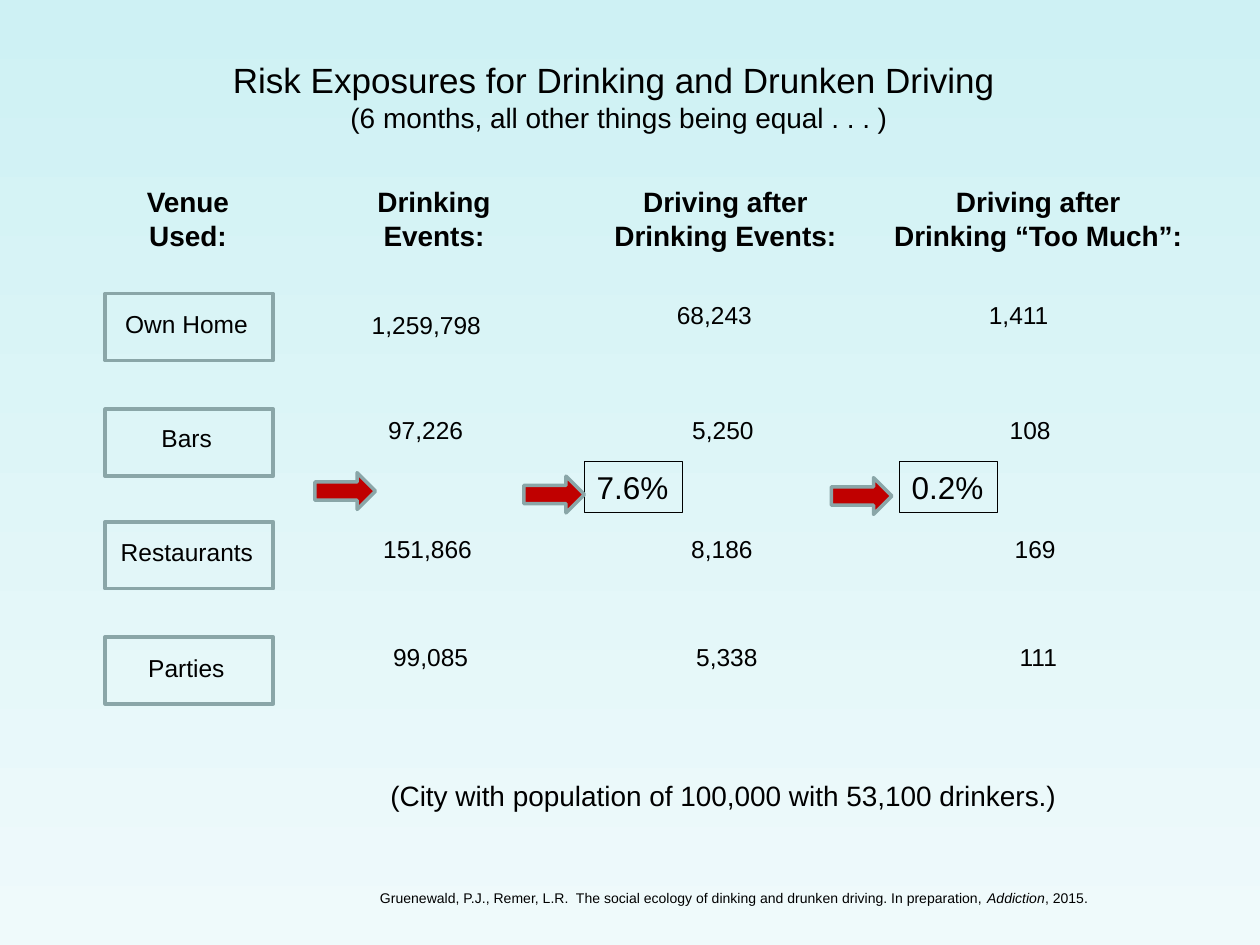
from dataclasses import dataclass

import pptx
import pptx.dml.color
import pptx.enum.shapes
import pptx.enum.text
import pptx.util

Cm = pptx.util.Cm
Pt = pptx.util.Pt
RGB = pptx.dml.color.RGBColor.from_string
SHAPE = pptx.enum.shapes.MSO_SHAPE
ALIGN = pptx.enum.text.PP_ALIGN
ANCHOR = pptx.enum.text.MSO_ANCHOR
FIT = pptx.enum.text.MSO_AUTO_SIZE


@dataclass(frozen=True)
class Theme:
    font: str = "Arial"
    ink: str = "000000"
    edge: str = "8AA6A8"
    arrow: str = "C00000"
    sky_top: str = "CEF1F4"
    sky_bottom: str = "EFFAFB"
    title: int = 20
    rate: int = 18
    heading: int = 16
    body: int = 14
    source: int = 8


THEME = Theme()

# Column headings: lines, left, width
HEADINGS = [
    ("Venue\nUsed:", 2.7, 2.18),
    ("Drinking\nEvents:", 7.34, 2.82),
    ("Driving after\nDrinking Events:", 12.11, 5.03),
    ("Driving after\nDrinking “Too Much”:", 17.73, 6.4),
]

# Venues: name, label left, label width, box top, label top
VENUES = [
    ("Own Home", 2.26, 3.0, 5.92, 6.17),
    ("Bars", 2.99, 1.55, 8.25, 8.46),
    ("Restaurants", 2.17, 3.2, 10.52, 10.77),
    ("Parties", 2.72, 2.08, 12.84, 13.11),
]

# Counts by venue: value, centre, top
COUNTS = [
    ("1,259,798", 8.62, 6.12), ("68,243", 14.42, 5.92), ("1,411", 20.57, 5.92),
    ("97,226", 8.6, 8.24), ("5,250", 14.59, 8.24), ("108", 20.78, 8.24),
    ("151,866", 8.64, 10.64), ("8,186", 14.57, 10.64), ("169", 20.88, 10.64),
    ("99,085", 8.7, 12.81), ("5,338", 14.67, 12.81), ("111", 20.98, 12.81),
]

RATES = [("7.6%", 11.78), ("0.2%", 18.13)]
ARROWS = [(6.35, 9.53), (10.56, 9.6), (16.76, 9.63)]


def style(p, size, align=ALIGN.LEFT, bold=False):
    p.alignment = align
    p.font.name = THEME.font
    p.font.size = Pt(size)
    p.font.bold = bold
    p.font.color.rgb = RGB(THEME.ink)


def place(sp, left, top, width, height):
    sp.left, sp.top, sp.width, sp.height = map(Cm, (left, top, width, height))


def add_text(s, text, box, size, align=ALIGN.LEFT, bold=False, spacing=None, wrap=False):
    sp = s.shapes.add_textbox(*map(Cm, box))
    tf = sp.text_frame
    tf.text = text
    tf.word_wrap = wrap
    tf.auto_size = FIT.SHAPE_TO_FIT_TEXT
    for p in tf.paragraphs:
        style(p, size, align, bold)
        if spacing:
            p.line_spacing = Pt(spacing)
    return sp


def add_outlined(s, shape, box, fill=None):
    sp = s.shapes.add_shape(shape, *map(Cm, box))
    sp.shadow.inherit = False
    if fill:
        sp.fill.solid()
        sp.fill.fore_color.rgb = RGB(fill)
    else:
        sp.fill.background()
    sp.line.color.rgb = RGB(THEME.edge)
    sp.line.width = Pt(2)


def add_count(s, text, centre, top):
    # Digits are twice as wide as commas; the box adds its two side insets
    commas = text.count(",")
    width = 0.51 + 0.28 * (len(text) - commas) + 0.14 * commas
    add_text(s, text, (centre - width / 2, top, width, 0.86), THEME.body)


def add_rate(s, text, left):
    sp = add_text(s, text, (left, 9.31, 1.98, 1.02), THEME.rate)
    sp.line.color.rgb = RGB(THEME.ink)
    sp.line.width = Pt(0.75)


def set_background(s):
    fill = s.background.fill
    fill.gradient()
    fill.gradient_angle = 270
    for stop, color in zip(fill.gradient_stops, (THEME.sky_top, THEME.sky_bottom)):
        stop.color.rgb = RGB(color)


def set_title(s):
    sp = s.shapes.title
    place(sp, 4.44, 1.05, 16.08, 1.8)
    tf = sp.text_frame
    tf.text = ("Risk Exposures for Drinking and Drunken Driving\n"
               "(6 months, all other things being equal . . . )")
    tf.word_wrap = True
    tf.auto_size = FIT.SHAPE_TO_FIT_TEXT
    tf.vertical_anchor = ANCHOR.TOP
    heading, subheading = tf.paragraphs
    style(heading, THEME.title)
    style(subheading, THEME.heading, ALIGN.CENTER)
    for p in tf.paragraphs:
        p.space_before = Pt(0)


def add_source(s):
    sp = add_text(s, "", (7.41, 17.81, 17.58, 0.61), THEME.source, wrap=True)
    p = sp.text_frame.paragraphs[0]
    for text, italic in [
        ("Gruenewald, P.J., Remer, L.R.  The social ecology of dinking and "
         "drunken driving. In preparation, ", False),
        ("Addiction", True),
        (", 2015.", False),
    ]:
        r = p.add_run()
        r.text = text
        r.font.italic = italic


def main():
    prs = pptx.Presentation()
    prs.slide_width, prs.slide_height = Cm(25.4), Cm(19.05)
    s = prs.slides.add_slide(prs.slide_layouts[5])
    set_background(s)
    set_title(s)

    # Venue boxes and their labels
    for name, left, width, box_top, label_top in VENUES:
        add_outlined(s, SHAPE.RECTANGLE, (2.12, box_top, 3.39, 1.35))
        add_text(s, name, (left, label_top, width, 0.79), THEME.body,
                 ALIGN.CENTER, spacing=15)

    # Headings and counts
    for text, left, width in HEADINGS:
        add_text(s, text, (left, 3.6, width, 1.63), THEME.heading,
                 ALIGN.CENTER, bold=True)
    for count in COUNTS:
        add_count(s, *count)

    # Rates and the arrows leading to them
    for rate in RATES:
        add_rate(s, *rate)
    for left, top in ARROWS:
        add_outlined(s, SHAPE.RIGHT_ARROW, (left, top, 1.22, 0.74), THEME.arrow)

    # Population note and citation
    add_text(s, "(City with population of 100,000 with 53,100 drinkers.)",
             (7.62, 15.57, 14.1, 0.94), THEME.heading)
    add_source(s)
    prs.save("out.pptx")


if __name__ == "__main__":
    main()
